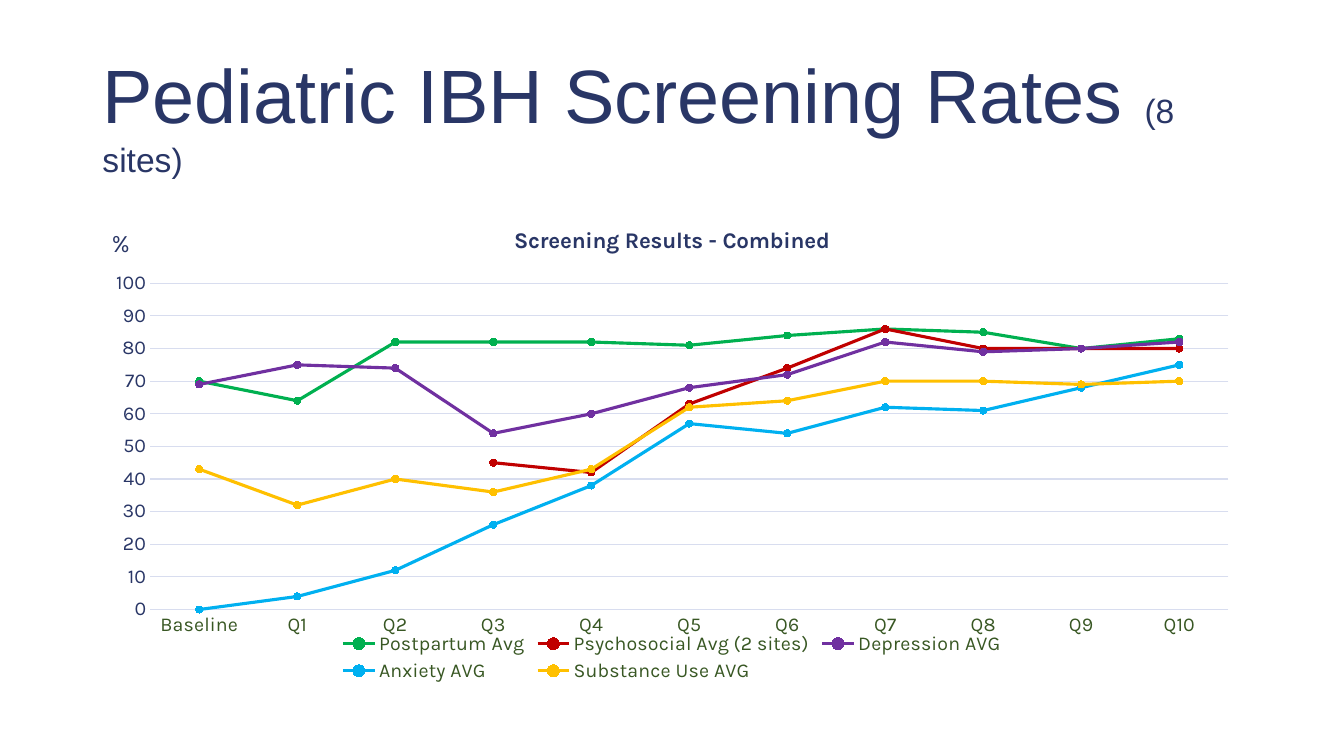
"""Build the pediatric screening rates slide with its line chart."""
from dataclasses import dataclass
from typing import Any, Optional

from lxml.etree import SubElement
from pptx import Presentation
from pptx.chart.data import CategoryChartData
from pptx.dml.color import RGBColor
from pptx.enum.chart import XL_CHART_TYPE as ChartType
from pptx.enum.chart import XL_LEGEND_POSITION as LegendPosition
from pptx.enum.chart import XL_MARKER_STYLE as MarkerStyle
from pptx.enum.chart import XL_TICK_MARK as TickMark
from pptx.enum.text import MSO_ANCHOR, MSO_AUTO_SIZE, PP_ALIGN
from pptx.oxml.ns import qn
from pptx.util import Pt

NAVY, GREEN, PALE = "293666", "385723", "D8DDEF"
QUARTERS = ["Baseline"] + [f"Q{number}" for number in range(1, 11)]


@dataclass
class Screening:
    name: str
    color: str
    rates: list[Optional[int]]


SCREENINGS = [
    Screening("Postpartum Avg", "00B050", [70, 64, 82, 82, 82, 81, 84, 86, 85, 80, 83]),
    Screening("Psychosocial Avg (2 sites)", "C00000",
              [None, None, None, 45, 42, 63, 74, 86, 80, 80, 80]),
    Screening("Depression AVG", "7030A0", [69, 75, 74, 54, 60, 68, 72, 82, 79, 80, 82]),
    Screening("Anxiety AVG", "00B0F0", [0, 4, 12, 26, 38, 57, 54, 62, 61, 68, 75]),
    Screening("Substance Use AVG", "FFC000", [43, 32, 40, 36, 43, 62, 64, 70, 70, 69, 70]),
]


def paint(color_format: Any, color: str) -> None:
    color_format.rgb = RGBColor.from_string(color)


def style_font(font: Any, size: float, color: str, face: str = "Karla",
               bold: bool = False) -> None:
    font.size, font.name, font.bold = Pt(size), face, bold
    paint(font.color, color)


def style_line(line: Any, color: str, width: float) -> None:
    line.width = Pt(width)
    line.fill.solid()
    paint(line.fill.fore_color, color)


def add_text(paragraph: Any, text: str, **style: Any) -> None:
    run = paragraph.add_run()
    run.text = text
    style_font(run.font, **style)


def place(shape: Any, left: float, top: float, width: float, height: float) -> None:
    shape.left, shape.top = Pt(left), Pt(top)
    shape.width, shape.height = Pt(width), Pt(height)


def fix_plot_area(chart: Any, x: float, y: float, w: float, h: float) -> None:
    plot_area = chart.element.find(f".//{qn('c:plotArea')}")
    layout = plot_area.find(qn("c:layout"))
    if layout is None:
        layout = SubElement(plot_area, qn("c:layout"))
        plot_area.insert(0, layout)
    manual = SubElement(layout, qn("c:manualLayout"))
    settings = {"layoutTarget": "inner", "xMode": "edge", "yMode": "edge",
                "x": x, "y": y, "w": w, "h": h}
    for tag, value in settings.items():
        SubElement(manual, qn(f"c:{tag}")).set("val", str(value))


def add_rates_chart(slide: Any) -> None:
    rates = CategoryChartData(number_format="0")
    rates.categories = QUARTERS
    for screening in SCREENINGS:
        rates.add_series(screening.name, screening.rates)
    chart = slide.shapes.add_chart(ChartType.LINE_MARKERS, Pt(66), Pt(147.6), Pt(828),
                                   Pt(342.7), rates).chart
    style_font(chart.font, 14, GREEN)
    chart.has_title = True
    add_text(chart.chart_title.text_frame.paragraphs[0], "Screening Results - Combined",
             size=16, color=NAVY, bold=True)
    chart.chart_title.include_in_layout = False
    fix_plot_area(chart, 0.05, 0.16, 0.93, 0.68)

    chart.has_legend = True
    chart.legend.position = LegendPosition.BOTTOM
    chart.legend.include_in_layout = False
    style_font(chart.legend.font, 14, GREEN)

    quarters, percent = chart.category_axis, chart.value_axis
    for axis, color in ((quarters, GREEN), (percent, NAVY)):
        axis.major_tick_mark = axis.minor_tick_mark = TickMark.NONE
        style_font(axis.tick_labels.font, 14, color)
    style_line(quarters.format.line, PALE, 0.75)
    percent.format.line.fill.background()
    style_line(percent.major_gridlines.format.line, PALE, 0.75)
    percent.minimum_scale, percent.maximum_scale, percent.major_unit = 0, 100, 10
    percent.tick_labels.number_format = "0"
    percent.tick_labels.number_format_is_linked = False

    plot = chart.plots[0]
    plot.vary_by_categories = False
    for screening, series in zip(SCREENINGS, plot.series):
        series.smooth = False
        style_line(series.format.line, screening.color, 2.25)
        marker = series.marker
        marker.style, marker.size = MarkerStyle.CIRCLE, 5
        marker.format.fill.solid()
        paint(marker.format.fill.fore_color, screening.color)
        style_line(marker.format.line, screening.color, 0.75)


def main() -> None:
    deck = Presentation()
    deck.slide_width, deck.slide_height = Pt(960), Pt(540)
    slide = deck.slides.add_slide(deck.slide_layouts[5])

    heading = slide.shapes.title
    place(heading, 66, 28.8, 828, 104.4)
    frame = heading.text_frame
    frame.word_wrap, frame.auto_size = True, MSO_AUTO_SIZE.NONE
    frame.vertical_anchor = MSO_ANCHOR.MIDDLE
    frame.paragraphs[0].alignment = PP_ALIGN.LEFT
    for text, size in (("Pediatric IBH Screening Rates ", 54), ("(8 sites)", 24)):
        add_text(frame.paragraphs[0], text, size=size, color=NAVY, face="Arial")

    add_rates_chart(slide)

    unit = slide.shapes.add_textbox(Pt(72.7), Pt(159.1), Pt(27.4), Pt(28.8))
    unit.text_frame.word_wrap = True
    add_text(unit.text_frame.paragraphs[0], "%", size=18, color=NAVY)

    deck.save("out.pptx")


if __name__ == "__main__":
    main()
